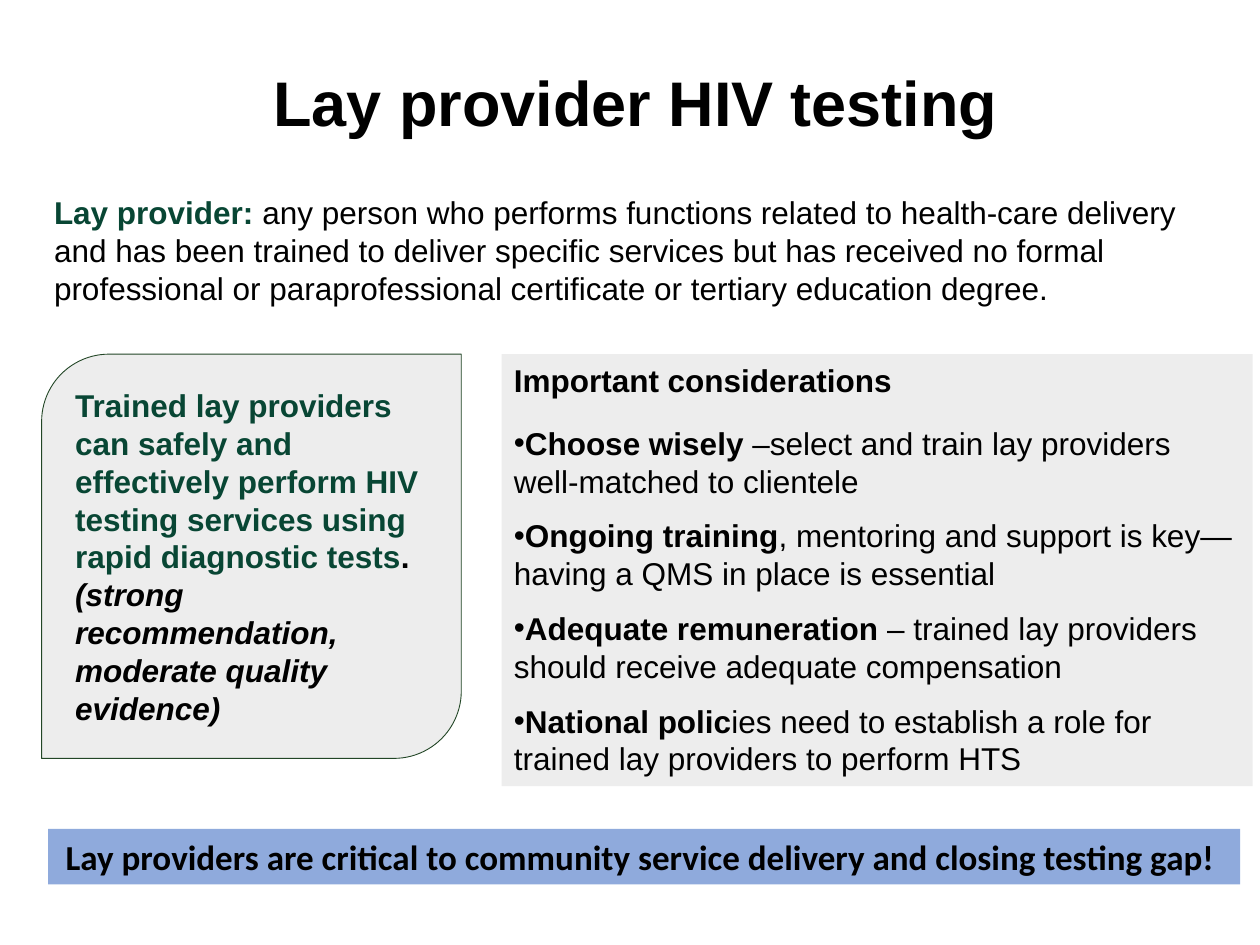
import pptx
import pptx.dml.color
import pptx.enum.shapes
import pptx.enum.text
import pptx.oxml.ns
import pptx.util
from lxml import etree
from pptx.util import Cm, Pt

# Content: each paragraph is a list of (text, colour, style) runs
BLACK, GREEN, PANEL, BANNER, OUTLINE = "000000", "084634", "EDEDED", "8FAADC", "224626"
TITLE = [[("Lay provider HIV testing", BLACK, "b")]]
DEFINITION = [[
    ("Lay provider: ", GREEN, "b"),
    ("any person who performs functions related to health-care delivery and has been "
     "trained to deliver specific services but has received no formal professional or "
     "paraprofessional certificate or tertiary education degree.", BLACK, ""),
]]
RECOMMENDATION = [
    [("Trained lay providers can safely and effectively perform HIV testing services "
      "using rapid diagnostic tests", GREEN, "b"), (".", BLACK, "b")],
    [("(strong recommendation, moderate quality evidence)", BLACK, "bi")],
]
HEADING = "Important considerations"
POINTS = [
    ("Choose wisely ", "–select and train lay providers well-matched to clientele"),
    ("Ongoing training", ", mentoring and support is key—having a QMS in place is essential"),
    ("Adequate remuneration ", "– trained lay providers should receive adequate compensation"),
    ("National polic", "ies need to establish a role for trained lay providers to perform HTS"),
]
CONSIDERATIONS = [[(HEADING, BLACK, "b")]] + [
    [(lead, BLACK, "b"), (detail, BLACK, "")] for lead, detail in POINTS]
MESSAGE = [[("Lay providers are critical to community service delivery and closing "
             "testing gap! ", BLACK, "b")]]

# Layout in centimetres: left, top, width, height
LEFT, TEXT_WIDTH, PANEL_TOP = 0.84, 23.95, 7.14
TITLE_BOX = (LEFT, 1.19, TEXT_WIDTH, 1.75)
DEFINITION_BOX = (LEFT, 3.76, TEXT_WIDTH, 2.57)
RECOMMENDATION_BOX = (LEFT, PANEL_TOP, 8.46, 8.15)
CONSIDERATIONS_BOX = (10.11, PANEL_TOP, 15.14, 8.71)
MESSAGE_BOX = (0.97, 16.71, 24.03, 1.12)

ALIGN = pptx.enum.text.PP_ALIGN
ANCHOR = pptx.enum.text.MSO_ANCHOR
SHAPES = pptx.enum.shapes.MSO_SHAPE


def colour(value):
    return pptx.dml.color.RGBColor.from_string(value)


def place(shape, box):
    shape.left, shape.top, shape.width, shape.height = map(Cm, box)


def paint(shape, fill):
    shape.fill.solid()
    shape.fill.fore_color.rgb = colour(fill)


def add_panel(slide, kind, box, fill):
    shape = slide.shapes.add_shape(kind, *map(Cm, box))
    shape.shadow.inherit = False
    paint(shape, fill)
    shape.line.fill.background()
    return shape


def write(shape, paragraphs, size=18, font="Arial", align=ALIGN.LEFT,
          anchor=ANCHOR.TOP, margins=(0.25, 0.13), wrap=True):
    frame = shape.text_frame
    frame.word_wrap = wrap
    frame.auto_size = pptx.enum.text.MSO_AUTO_SIZE.NONE
    frame.vertical_anchor = anchor
    frame.margin_left = frame.margin_right = Cm(margins[0])
    frame.margin_top = frame.margin_bottom = Cm(margins[1])
    for index, runs in enumerate(paragraphs):
        paragraph = frame.add_paragraph() if index else frame.paragraphs[0]
        paragraph.alignment = align
        paragraph.space_before = Pt(0)
        for text, run_colour, style in runs:
            run = paragraph.add_run()
            run.text = text
            run.font.name, run.font.size = font, Pt(size)
            run.font.bold, run.font.italic = "b" in style, "i" in style
            run.font.color.rgb = colour(run_colour)


def set_bullet(paragraph, bullet):
    properties = paragraph._p.get_or_add_pPr()
    properties.set("marL", "0")
    properties.set("indent", "0")
    tag = "a:buChar" if bullet else "a:buNone"
    element = etree.SubElement(properties, pptx.oxml.ns.qn(tag))
    if bullet:
        element.set("char", bullet)


def main():
    presentation = pptx.Presentation()
    presentation.slide_width, presentation.slide_height = Cm(25.4), Cm(19.05)
    slide = presentation.slides.add_slide(presentation.slide_layouts[1])

    # Title and definition
    title = slide.shapes.title
    place(title, TITLE_BOX)
    write(title, TITLE, size=36, align=ALIGN.CENTER, margins=(0.23, 0.1))
    definition = slide.shapes.add_textbox(*map(Cm, DEFINITION_BOX))
    write(definition, DEFINITION)

    # Recommendation with two rounded corners
    recommendation = add_panel(slide, SHAPES.ROUND_2_DIAG_RECTANGLE, RECOMMENDATION_BOX, PANEL)
    recommendation.line.color.rgb = colour(OUTLINE)
    recommendation.line.width = Pt(0.5)
    write(recommendation, RECOMMENDATION, anchor=ANCHOR.MIDDLE, margins=(0.28, 0.15))

    # Bulleted considerations
    considerations = slide.placeholders[1]
    place(considerations, CONSIDERATIONS_BOX)
    paint(considerations, PANEL)
    write(considerations, CONSIDERATIONS)
    heading, *points = considerations.text_frame.paragraphs
    set_bullet(heading, None)
    for index, point in enumerate(points):
        point.space_before = Pt(9.7 if index else 14.5)
        set_bullet(point, "•")

    # Closing message
    message = add_panel(slide, SHAPES.RECTANGLE, MESSAGE_BOX, BANNER)
    write(message, MESSAGE, size=20, font="Calibri", align=ALIGN.CENTER, wrap=False)

    presentation.save("out.pptx")


if __name__ == "__main__":
    main()
